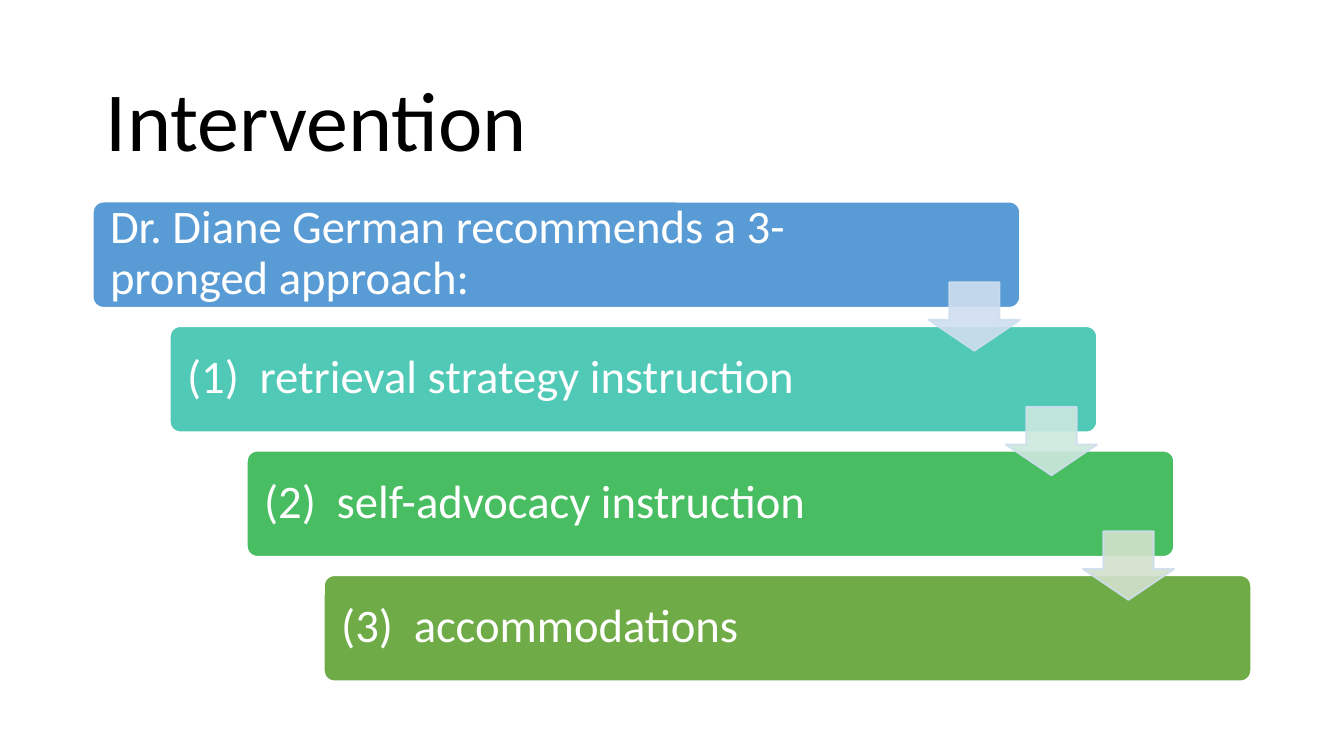
from dataclasses import dataclass
from typing import Optional

from lxml import etree
from pptx import Presentation
from pptx.dml.color import RGBColor
from pptx.enum import shapes, text
from pptx.oxml import ns
from pptx.util import Inches, Pt

WHITE = RGBColor(0xFF, 0xFF, 0xFF)
BLACK = RGBColor(0x00, 0x00, 0x00)
BLUE = RGBColor(0x59, 0x9B, 0xD5)
TEAL = RGBColor(0x50, 0xC9, 0xB6)
GREEN = RGBColor(0x48, 0xBD, 0x62)
OLIVE = RGBColor(0x6F, 0xAB, 0x46)
PALE_BLUE = RGBColor(0xCF, 0xDE, 0xEF)
PALE_TEAL = RGBColor(0xCC, 0xE8, 0xDD)
PALE_GREEN = RGBColor(0xD3, 0xE1, 0xCC)

FIRST_LEFT, FIRST_TOP = 0.69, 1.5
LAST_LEFT, LAST_TOP = 2.41, 4.28
BAR_WIDTH, BAR_HEIGHT = 6.9, 0.79
ARROW_WIDTH, ARROW_HEIGHT = 0.68, 0.51
NUMBER_INDENT = 0.54
ARROW_OPACITY = 90


@dataclass
class Box:
    left: float
    top: float
    width: float
    height: float

    def lengths(self) -> list:
        return [Inches(value) for value in (self.left, self.top, self.width, self.height)]


@dataclass
class Step:
    label: str
    color: RGBColor
    text_width: float
    arrow_color: Optional[RGBColor] = None
    numbered: bool = True


STEPS = [
    Step("Dr. Diane German recommends a 3-pronged approach:", BLUE, 5.68, PALE_BLUE, False),
    Step("(1)\tretrieval strategy instruction", TEAL, 5.58, PALE_TEAL),
    Step("(2)\tself-advocacy instruction", GREEN, 5.59, PALE_GREEN),
    Step("(3)\taccommodations", OLIVE, 5.58),
]
STEP_RIGHT = (LAST_LEFT - FIRST_LEFT) / (len(STEPS) - 1)
STEP_DOWN = (LAST_TOP - FIRST_TOP) / (len(STEPS) - 1)


def set_opacity(fill_parent, percent: int) -> None:
    color = fill_parent.find(ns.qn("a:solidFill"))[0]
    etree.SubElement(color, ns.qn("a:alpha"), val=str(percent * 1000))


def add_text(slide, box: Box, content: str, size: float, color: RGBColor,
             vertical_margin: float, indent: float = 0) -> None:
    """Add a text box; a nonzero indent hangs the text after its number."""
    frame = slide.shapes.add_textbox(*box.lengths()).text_frame
    frame_format = {
        "word_wrap": True,
        "vertical_anchor": text.MSO_ANCHOR.MIDDLE,
        "margin_left": Inches(0.1),
        "margin_right": Inches(0.1),
        "margin_top": Inches(vertical_margin),
        "margin_bottom": Inches(vertical_margin),
    }
    for name, value in frame_format.items():
        setattr(frame, name, value)
    paragraph = frame.paragraphs[0]
    paragraph.text = content
    paragraph.line_spacing = 0.9
    if indent:
        properties = paragraph._p.get_or_add_pPr()
        properties.set("marL", str(Inches(indent)))
        properties.set("indent", str(-Inches(indent)))
    font = paragraph.runs[0].font
    for name, value in {"name": "Calibri", "size": Pt(size)}.items():
        setattr(font, name, value)
    font.color.rgb = color


def add_filled_shape(slide, kind, box: Box, fill: RGBColor, line: RGBColor,
                     adjustments: list, opacity: int = 100) -> None:
    shape = slide.shapes.add_shape(kind, *box.lengths())
    shape.shadow.inherit = False
    for index, value in enumerate(adjustments):
        shape.adjustments[index] = value
    shape.fill.solid()
    shape.fill.fore_color.rgb = fill
    shape.line.color.rgb = line
    shape.line.width = Pt(1)
    if opacity < 100:
        properties = shape._element.spPr
        set_opacity(properties, opacity)
        set_opacity(properties.find(ns.qn("a:ln")), opacity)


def add_bar(slide, index: int, step: Step) -> None:
    left = FIRST_LEFT + index * STEP_RIGHT
    top = FIRST_TOP + index * STEP_DOWN
    add_filled_shape(slide, shapes.MSO_SHAPE.ROUNDED_RECTANGLE,
                     Box(left, top, BAR_WIDTH, BAR_HEIGHT), step.color, WHITE, [0.1])
    add_text(slide, Box(left + 0.03, top + 0.02, step.text_width, 0.74), step.label,
             25, WHITE, 0.1, NUMBER_INDENT if step.numbered else 0)


def add_arrow(slide, index: int, color: RGBColor) -> None:
    """Point from the right end of one bar down to the next."""
    left = FIRST_LEFT + index * STEP_RIGHT + BAR_WIDTH - ARROW_WIDTH
    top = FIRST_TOP + index * STEP_DOWN + 0.6
    add_filled_shape(slide, shapes.MSO_SHAPE.DOWN_ARROW,
                     Box(left, top, ARROW_WIDTH, ARROW_HEIGHT), color, PALE_BLUE,
                     [0.55, 0.45], ARROW_OPACITY)


def main() -> None:
    presentation = Presentation()
    presentation.slide_width = Inches(10)
    presentation.slide_height = Inches(10 * 9 / 16)
    slide = presentation.slides.add_slide(presentation.slide_layouts[6])

    add_text(slide, Box(0.69, 0.46, 8.62, 0.93), "Intervention", 45, BLACK, 0.05)
    for index, step in enumerate(STEPS):
        add_bar(slide, index, step)
    for index, step in enumerate(STEPS):
        if step.arrow_color is not None:
            add_arrow(slide, index, step.arrow_color)

    presentation.save("out.pptx")


if __name__ == "__main__":
    main()
